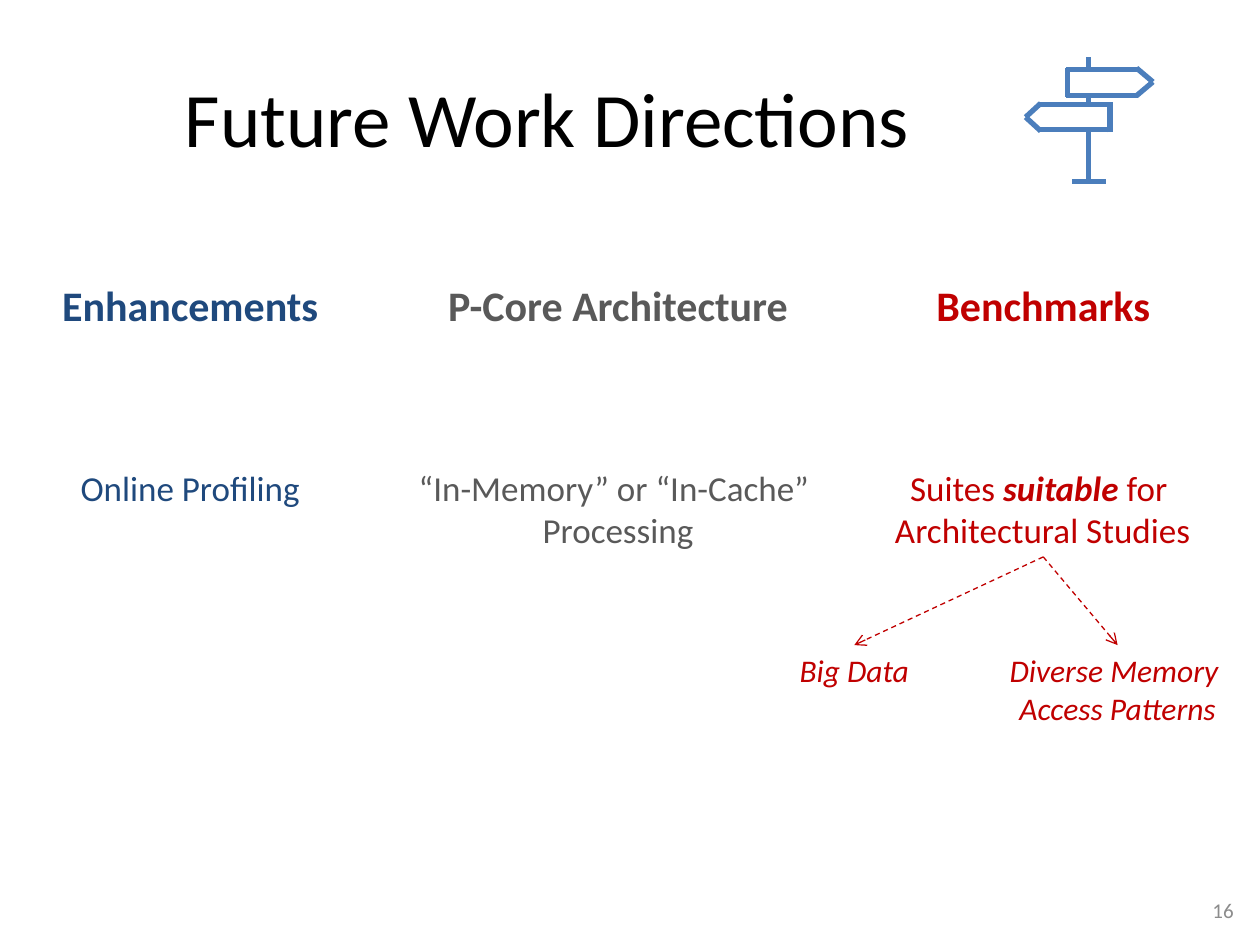
from lxml import etree
from pptx import Presentation
from pptx.dml.color import RGBColor
from pptx.enum.dml import MSO_LINE
from pptx.enum.shapes import MSO_CONNECTOR
from pptx.enum.text import MSO_ANCHOR, PP_ALIGN
from pptx.oxml.ns import qn
from pptx.util import Inches, Pt

BLUE, GREY, RED = "1F497D", "595959", "C00000"
SIGN_BLUE, NUMBER_GREY = "4B7EBC", "8C8C8C"


def write(frame, text, size, color, bold=False, italic=False, emphasis=None,
          align=PP_ALIGN.CENTER, anchor=MSO_ANCHOR.TOP, wrap=False):
    """Fill a text frame, one paragraph a line; emphasis is set bold italic."""
    frame.word_wrap = wrap
    frame.vertical_anchor = anchor
    for index, line in enumerate(text.split("\n")):
        paragraph = frame.paragraphs[0] if index == 0 else frame.add_paragraph()
        paragraph.alignment = align
        parts = line.partition(emphasis) if emphasis else [line]
        for part in filter(None, parts):
            strong = part == emphasis
            run = paragraph.add_run()
            run.text = part
            run.font.name = "Calibri"
            run.font.size = Pt(size)
            run.font.bold = bold or strong
            run.font.italic = italic or strong
            run.font.color.rgb = RGBColor.from_string(color)


def add_line(shapes, start, end, color, width):
    line = shapes.add_connector(MSO_CONNECTOR.STRAIGHT,
                                *[Inches(value) for value in (*start, *end)])
    line.line.color.rgb = RGBColor.from_string(color)
    line.line.width = Pt(width)
    etree.SubElement(line._element.spPr, qn("a:effectLst"))
    return line


prs = Presentation()
prs.slide_width, prs.slide_height = Inches(10), Inches(7.5)
slide = prs.slides.add_slide(prs.slide_layouts[5])

title = slide.shapes.title
title.left, title.top = Inches(0.25), Inches(0.3)
title.width, title.height = Inches(8.19), Inches(1.25)
write(title.text_frame, "Future Work Directions", 44, "000000",
      anchor=MSO_ANCHOR.MIDDLE, wrap=True)

# Three directions, with the two benchmark needs below the last one
labels = [
    (0.38, 2.17, 2.26, 0.5, "Enhancements", 24, BLUE, {"bold": True}),
    (3.44, 2.17, 2.93, 0.5, "P-Core Architecture", 24, GREY, {"bold": True}),
    (7.32, 2.17, 1.92, 0.5, "Benchmarks", 24, RED, {"bold": True}),
    (0.53, 3.65, 1.96, 0.44, "Online Profiling", 20, BLUE, {}),
    (3.21, 3.65, 3.39, 0.77, "“In-Memory” or “In-Cache” \nProcessing", 20, GREY, {}),
    (6.48, 3.65, 3.59, 0.77, "Suites suitable for \nArchitectural Studies", 20, RED,
     {"emphasis": "suitable ", "wrap": True}),
    (6.24, 5.12, 1.08, 0.4, "Big Data", 18, RED, {"italic": True}),
    (7.9, 5.12, 1.94, 0.71, "Diverse Memory \nAccess Patterns", 18, RED, {"italic": True}),
    (7.56, 7.02, 2.33, 0.4, "16", 12, NUMBER_GREY,
     {"align": PP_ALIGN.RIGHT, "anchor": MSO_ANCHOR.MIDDLE, "wrap": True}),
]
for left, top, width, height, text, size, color, style in labels:
    label = slide.shapes.add_textbox(Inches(left), Inches(top), Inches(width), Inches(height))
    write(label.text_frame, text, size, color, **style)

for need_x in (6.78, 8.87):
    arrow = add_line(slide.shapes, (8.28, 4.42), (need_x, 5.12), RED, 0.75)
    arrow.line.dash_style = MSO_LINE.DASH
    etree.SubElement(arrow.line._get_or_add_ln(), qn("a:tailEnd"), type="arrow")

# Signpost: foot, pole pieces, then the left and right boards
signpost = slide.shapes.add_group_shape()
signpost_lines = [
    ((8.51, 1.44), (8.78, 1.44)),
    ((8.64, 1.45), (8.64, 1.05)),
    ((8.64, 0.83), (8.64, 0.75)),
    ((8.64, 0.55), (8.64, 0.45)),
    ((8.25, 1.03), (8.83, 1.03)),
    ((8.25, 0.83), (8.83, 0.83)),
    ((8.81, 1.05), (8.81, 0.81)),
    ((8.26, 1.04), (8.14, 0.93)),
    ((8.14, 0.93), (8.26, 0.82)),
    ((9.03, 0.55), (8.46, 0.55)),
    ((9.03, 0.76), (8.46, 0.76)),
    ((8.47, 0.54), (8.47, 0.77)),
    ((9.02, 0.54), (9.15, 0.65)),
    ((9.15, 0.65), (9.02, 0.76)),
]
for start, end in signpost_lines:
    add_line(signpost.shapes, start, end, SIGN_BLUE, 3)

prs.save("out.pptx")
